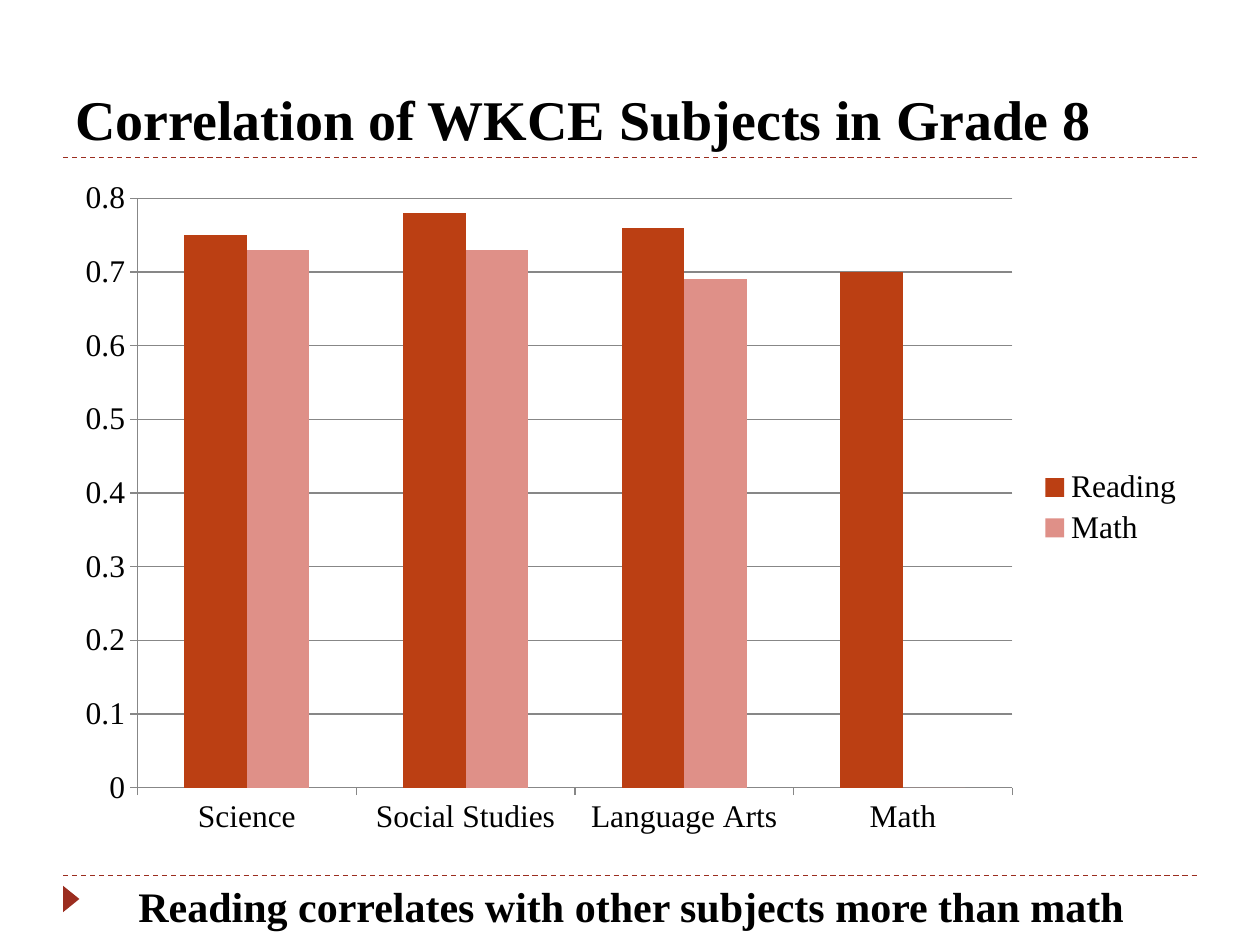
from lxml.etree import SubElement
from pptx import Presentation
from pptx.chart.data import CategoryChartData
from pptx.dml.color import RGBColor
from pptx.enum.chart import XL_CHART_TYPE, XL_LEGEND_POSITION, XL_TICK_MARK
from pptx.enum.dml import MSO_LINE
from pptx.enum.shapes import MSO_CONNECTOR, MSO_SHAPE
from pptx.enum.text import MSO_ANCHOR
from pptx.oxml.ns import qn
from pptx.util import Inches, Pt

FONT = "Times New Roman"
BLACK = RGBColor(0x00, 0x00, 0x00)
RED = RGBColor(0x9B, 0x2D, 0x1F)
RUST = RGBColor(0xBB, 0x3F, 0x13)
PINK = RGBColor(0xDF, 0x90, 0x88)
GRAY = RGBColor(0x87, 0x87, 0x87)

SUBJECTS = ["Science", "Social Studies", "Language Arts", "Math"]
SERIES = [
    ("Reading", [0.75, 0.78, 0.76, 0.7], RUST),
    ("Math", [0.73, 0.73, 0.69, 0], PINK),
]


def style(item, values):
    for name, value in values.items():
        setattr(item, name, value)


def set_font(font, size, bold=False):
    style(font, {"name": FONT, "size": Pt(size), "bold": bold})
    font.color.rgb = BLACK


def add_text(slide, box, text, size, anchor):
    frame = slide.shapes.add_textbox(*map(Inches, box)).text_frame
    style(frame, {"word_wrap": True, "vertical_anchor": anchor})
    run = frame.paragraphs[0].add_run()
    run.text = text
    set_font(run.font, size, bold=True)


def add_rule(slide, top):
    rule = slide.shapes.add_connector(
        MSO_CONNECTOR.STRAIGHT, Inches(0.5), Inches(top), Inches(9.5), Inches(top))
    style(rule.line, {"width": Pt(0.75), "dash_style": MSO_LINE.DASH})
    rule.line.color.rgb = RED
    SubElement(rule._element.spPr, qn("a:effectLst"))


def add_marker(slide):
    mark = slide.shapes.add_shape(
        MSO_SHAPE.ISOSCELES_TRIANGLE,
        Inches(0.46), Inches(7.07), Inches(0.21), Inches(0.13))
    mark.rotation = 90
    mark.shadow.inherit = False
    mark.fill.solid()
    mark.fill.fore_color.rgb = RED
    mark.line.fill.background()


def style_axis(axis, values):
    style(axis, {"major_tick_mark": XL_TICK_MARK.OUTSIDE,
                 "minor_tick_mark": XL_TICK_MARK.NONE, **values})
    axis.format.line.color.rgb = GRAY
    set_font(axis.tick_labels.font, 18)


def add_bars(slide):
    data = CategoryChartData()
    data.categories = SUBJECTS
    for name, values, _ in SERIES:
        data.add_series(name, values)
    chart = slide.shapes.add_chart(
        XL_CHART_TYPE.COLUMN_CLUSTERED,
        Inches(0.5), Inches(1.33), Inches(9), Inches(5.4), data).chart
    style(chart, {"has_title": False, "has_legend": True})
    set_font(chart.font, 18)

    # Legend
    style(chart.legend, {"position": XL_LEGEND_POSITION.RIGHT,
                         "include_in_layout": False})
    set_font(chart.legend.font, 18)

    # Axes and grid
    style_axis(chart.category_axis, {"has_major_gridlines": False})
    style_axis(chart.value_axis, {
        "minimum_scale": 0, "maximum_scale": 0.8, "major_unit": 0.1,
        "has_major_gridlines": True})
    chart.value_axis.major_gridlines.format.line.color.rgb = GRAY

    # Bars
    plot = chart.plots[0]
    style(plot, {"gap_width": 150, "overlap": 0, "vary_by_categories": False})
    for bars, (_, _, color) in zip(plot.series, SERIES):
        bars.format.fill.solid()
        bars.format.fill.fore_color.rgb = color


def main():
    deck = Presentation()
    style(deck, {"slide_width": Inches(10), "slide_height": Inches(7.5)})
    slide = deck.slides.add_slide(deck.slide_layouts[6])

    # Frame
    for top in (6.95, 1.25):
        add_rule(slide, top)
    add_marker(slide)

    # Content
    add_text(slide, (0.5, 0.17, 9, 1.08),
             "Correlation of WKCE Subjects in Grade 8", 32, MSO_ANCHOR.BOTTOM)
    add_bars(slide)
    add_text(slide, (1, 6.94, 8.17, 0.5),
             "Reading correlates with other subjects more than math", 24,
             MSO_ANCHOR.TOP)
    deck.save("out.pptx")


if __name__ == "__main__":
    main()
